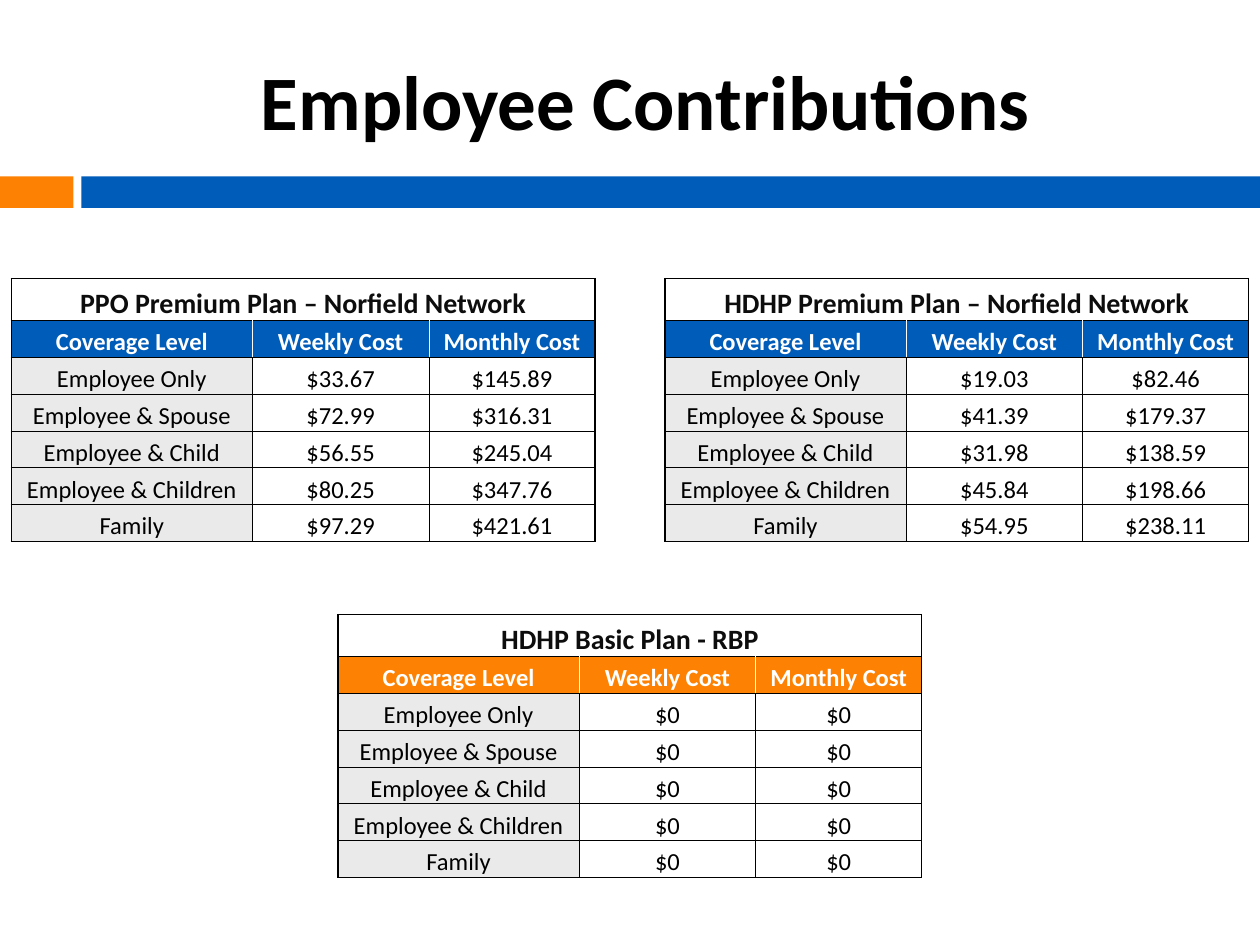
from lxml.etree import SubElement
from pptx import Presentation
from pptx.dml.color import RGBColor
from pptx.enum.shapes import MSO_SHAPE
from pptx.enum.text import MSO_ANCHOR, PP_ALIGN
from pptx.oxml.ns import qn
from pptx.util import Pt

COLORS = {
    "blue": "005CB9",
    "orange": "FD8103",
    "gray": "EAEAEA",
    "white": "FFFFFF",
    "black": "000000",
    "ink": "0D0D0D",
}
FONT = "Calibri"
HEADING = "Employee Contributions"
BANDS = [(0, 42, "orange"), (46.5, 673.5, "blue")]
HEADERS = ["Coverage Level", "Weekly Cost", "Monthly Cost"]
LEVELS = ["Employee Only", "Employee & Spouse", "Employee & Child",
          "Employee & Children", "Family"]
PLANS = [
    {"name": "PPO Premium Plan – Norfield Network", "at": (6.5, 159.2), "accent": "blue",
     "weekly": ["$33.67", "$72.99", "$56.55", "$80.25", "$97.29"],
     "monthly": ["$145.89", "$316.31", "$245.04", "$347.76", "$421.61"]},
    {"name": "HDHP Basic Plan - RBP", "at": (193.2, 351.2), "accent": "orange",
     "weekly": ["$0"] * 5,
     "monthly": ["$0"] * 5},
    {"name": "HDHP Premium Plan – Norfield Network", "at": (380, 159.2), "accent": "blue",
     "weekly": ["$19.03", "$41.39", "$31.98", "$45.84", "$54.95"],
     "monthly": ["$82.46", "$179.37", "$138.59", "$198.66", "$238.11"]},
]
COLUMN_WIDTHS = [137.7, 101, 94.8]
TITLE_ROW, BODY_ROW = 24, 21.05
THIN, THICK = 0.5, 1


def rgb(name):
    return RGBColor.from_string(COLORS[name])


def style(paragraph, size, color, bold):
    paragraph.alignment = PP_ALIGN.CENTER
    font = paragraph.font
    font.name, font.size, font.bold = FONT, Pt(size), bold
    font.color.rgb = rgb(color)


def add_border(cell, side, color, weight):
    line = SubElement(cell._tc.get_or_add_tcPr(), qn(f"a:ln{side}"), w=str(Pt(weight)))
    SubElement(SubElement(line, qn("a:solidFill")), qn("a:srgbClr"), val=COLORS[color])


def add_borders(cell, row, column, last_row, last_column):
    inner = "white" if row == 1 else "black"
    at_left = column == 0
    at_right = column == last_column or row == 0
    add_border(cell, "L", "black" if at_left else inner, THICK if at_left else THIN)
    add_border(cell, "R", "black" if at_right else inner, THICK if at_right else THIN)
    add_border(cell, "T", "black", THICK if row == 0 else THIN)
    add_border(cell, "B", "black", THICK if row == last_row else THIN)


def cell_look(row, column, accent):
    if row == 0:
        return "white", 16, "ink", True
    if row == 1:
        return accent, 14, "white", True
    return ("white" if column else "gray"), 14, "black", False


def add_plan(slide, plan):
    rows = [[plan["name"], "", ""], HEADERS, *zip(LEVELS, plan["weekly"], plan["monthly"])]
    heights = [TITLE_ROW] + [BODY_ROW] * (len(rows) - 1)
    left, top = plan["at"]
    table = slide.shapes.add_table(
        len(rows), len(HEADERS), Pt(left), Pt(top),
        Pt(sum(COLUMN_WIDTHS)), Pt(sum(heights))).table
    table.first_row = table.horz_banding = False
    for column, width in zip(table.columns, COLUMN_WIDTHS):
        column.width = Pt(width)
    for row, height in zip(table.rows, heights):
        row.height = Pt(height)
    table.cell(0, 0).merge(table.cell(0, len(HEADERS) - 1))
    for r, texts in enumerate(rows):
        for c, text in enumerate(texts):
            cell = table.cell(r, c)
            fill, size, color, bold = cell_look(r, c, plan["accent"])
            add_borders(cell, r, c, len(rows) - 1, len(HEADERS) - 1)
            cell.fill.solid()
            cell.fill.fore_color.rgb = rgb(fill)
            cell.margin_left = cell.margin_right = cell.margin_top = Pt(0.7)
            cell.margin_bottom = 0
            cell.vertical_anchor = MSO_ANCHOR.MIDDLE
            if text:
                cell.text = text
            paragraph = cell.text_frame.paragraphs[0]
            paragraph.line_spacing = 1.19
            style(paragraph, size, color, bold)


def main():
    deck = Presentation()
    deck.slide_width, deck.slide_height = Pt(720), Pt(540)
    slide = deck.slides.add_slide(deck.slide_layouts[6])

    for left, width, color in BANDS:
        band = slide.shapes.add_shape(
            MSO_SHAPE.RECTANGLE, Pt(left), Pt(100.8), Pt(width), Pt(18))
        band.shadow.inherit = False
        band.fill.solid()
        band.fill.fore_color.rgb = rgb(color)
        band.line.fill.background()

    heading = slide.shapes.add_textbox(Pt(48), Pt(18), Pt(642), Pt(78)).text_frame
    heading.word_wrap = True
    heading.vertical_anchor = MSO_ANCHOR.MIDDLE
    heading.text = HEADING
    style(heading.paragraphs[0], 44, "black", True)

    for plan in PLANS:
        add_plan(slide, plan)

    deck.save("out.pptx")


if __name__ == "__main__":
    main()
